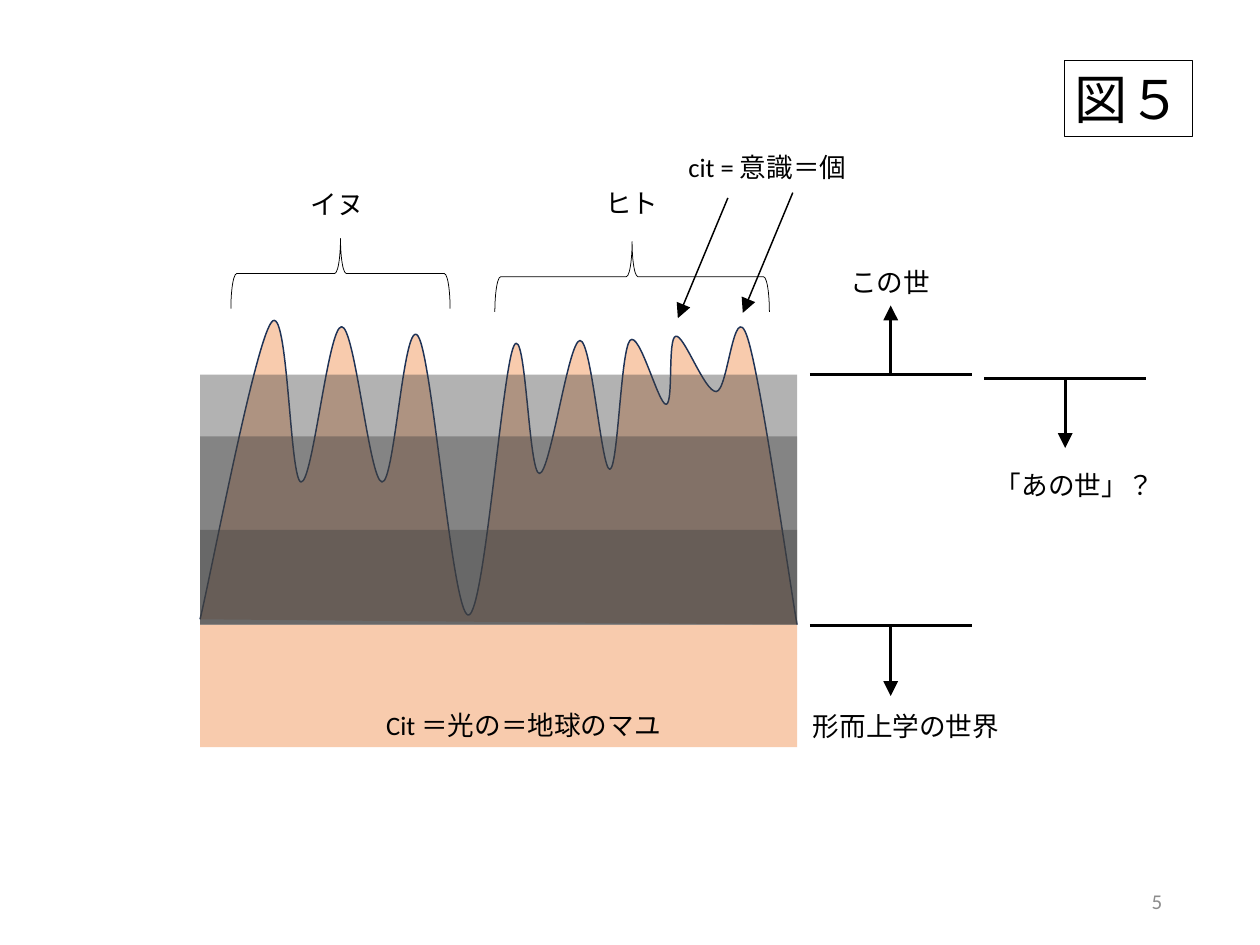
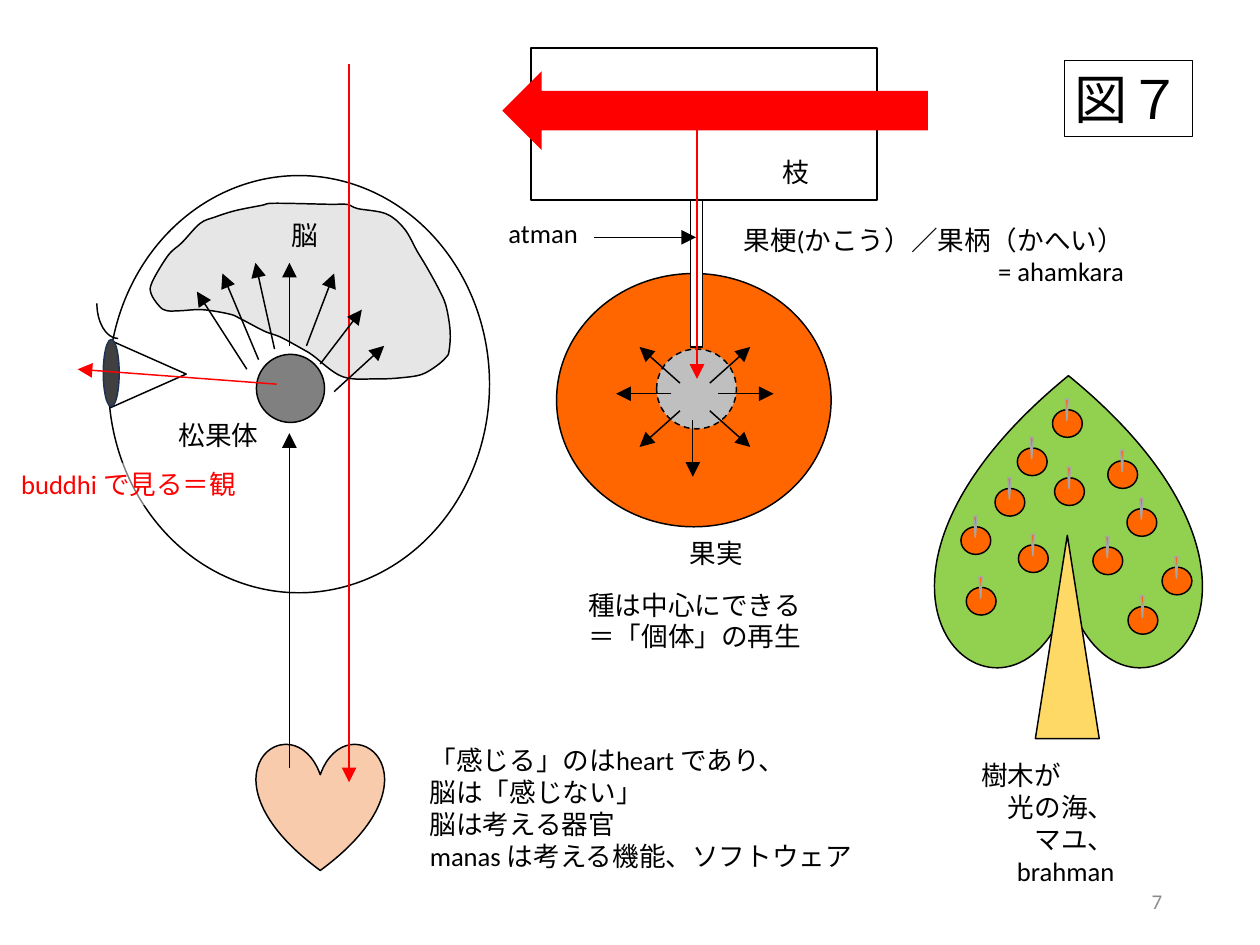
from pptx import Presentation
from pptx.dml.color import RGBColor
from pptx.enum.dml import MSO_LINE
from pptx.enum.lang import MSO_LANGUAGE_ID
from pptx.enum.shapes import MSO_CONNECTOR, MSO_SHAPE
from pptx.enum.text import MSO_ANCHOR, MSO_AUTO_SIZE, PP_ALIGN
from pptx.oxml.ns import qn
from pptx.util import Pt
from lxml.etree import SubElement

PX = 9144
FONT = "Calibri"
BLACK = RGBColor(0x00, 0x00, 0x00)
WHITE = RGBColor(0xFF, 0xFF, 0xFF)
RED = RGBColor(0xFF, 0x00, 0x00)
ORANGE = RGBColor(0xFF, 0x66, 0x00)
PEACH = RGBColor(0xF8, 0xCB, 0xAD)
GREEN = RGBColor(0x92, 0xD0, 0x50)
YELLOW = RGBColor(0xFF, 0xD9, 0x66)
NAVY = RGBColor(0x1E, 0x32, 0x56)
CHARCOAL = RGBColor(0x40, 0x40, 0x40)
GRAY = RGBColor(0x80, 0x80, 0x80)
NUMBER_GRAY = RGBColor(0x8C, 0x8C, 0x8C)
STEM_GRAY = RGBColor(0xA6, 0xA6, 0xA6)
SEED_GRAY = RGBColor(0xBF, 0xBF, 0xBF)
PALE_GRAY = RGBColor(0xE7, 0xE6, 0xE6)


def write(frame, text, size=18, color=BLACK, align=PP_ALIGN.LEFT, anchor=MSO_ANCHOR.TOP,
          wrap=True, fit=MSO_AUTO_SIZE.SHAPE_TO_FIT_TEXT):
    frame.word_wrap = wrap
    frame.auto_size = fit
    frame.vertical_anchor = anchor
    for index, line in enumerate(text.split("\n")):
        para = frame.add_paragraph() if index else frame.paragraphs[0]
        para.alignment = align
        span = para.add_run()
        span.text = line
        span.font.name = FONT
        span.font.size = Pt(size)
        span.font.color.rgb = color
        span.font.language_id = MSO_LANGUAGE_ID.JAPANESE


def bend(shape, points, closed):
    count = len(points)
    left, top = (min(axis) for axis in zip(*points))

    def point(index):
        return points[index % count if closed else min(max(index, 0), count - 1)]

    segments = list(shape._element.iter(qn("a:lnTo")))
    for index, segment in enumerate(segments):
        before, start, end, after = (point(index + shift) for shift in (-1, 0, 1, 2))
        controls = (
            tuple(s + (e - b) / 6 for b, s, e in zip(before, start, end)),
            tuple(e - (a - s) / 6 for s, e, a in zip(start, end, after)),
            end)
        segment.tag = qn("a:cubicBezTo")
        segment.remove(segment[0])
        for x, y in controls:
            corner = SubElement(segment, qn("a:pt"))
            corner.set("x", str(round((x - left) * PX)))
            corner.set("y", str(round((y - top) * PX)))


class Sketch:
    """Holds the deck style and the current page, and draws each kind of element."""

    def __init__(self, width, height):
        self.deck = Presentation()
        self.deck.slide_width = width * PX
        self.deck.slide_height = height * PX
        self.page = None

    def new_page(self, title, number):
        self.page = self.deck.slides.add_slide(self.deck.slide_layouts[5])
        box = self.page.shapes.title
        box.left, box.top, box.width, box.height = (v * PX for v in (1000, 57, 121, 71))
        box.line.color.rgb = BLACK
        box.line.width = Pt(0.75)
        write(box.text_frame, title, size=36, wrap=False, fit=MSO_AUTO_SIZE.NONE)
        self.label(number, 836, 823, 266, 47, size=14.2, color=NUMBER_GRAY,
                   align=PP_ALIGN.RIGHT, anchor=MSO_ANCHOR.MIDDLE, fit=MSO_AUTO_SIZE.NONE)

    def paint(self, shape, fill, line, weight, alpha=None):
        if fill is None:
            shape.fill.background()
        else:
            shape.fill.solid()
            shape.fill.fore_color.rgb = fill
            if alpha:
                color = shape._element.spPr.find(qn("a:solidFill"))[0]
                SubElement(color, qn("a:alpha")).set("val", str(alpha * 1000))
        if line is None:
            shape.line.fill.background()
        else:
            shape.line.color.rgb = line
            shape.line.width = Pt(weight)

    def shape(self, kind, x, y, width, height, fill=None, line=BLACK, weight=1,
              alpha=None, turn=0, dash=None):
        shape = self.page.shapes.add_shape(kind, x * PX, y * PX, width * PX, height * PX)
        shape.shadow.inherit = False
        shape.rotation = turn
        self.paint(shape, fill, line, weight, alpha)
        if dash:
            shape.line.dash_style = dash

    def outline(self, points, fill, line=BLACK, closed=False):
        builder = self.page.shapes.build_freeform(*points[0], scale=PX)
        builder.add_line_segments(points[1:] + points[:1] * closed, close=closed)
        shape = builder.convert_to_shape()
        path = next(shape._element.iter(qn("a:path")))
        path.set("w", str(shape.width))
        path.set("h", str(shape.height))
        for corner in path.iter(qn("a:pt")):
            for axis in ("x", "y"):
                corner.set(axis, str(int(corner.get(axis)) * PX))
        bend(shape, points, closed)
        shape.shadow.inherit = False
        self.paint(shape, fill, line, 1)

    def label(self, text, x, y, width, height=40, fill=None, alpha=None, **style):
        box = self.page.shapes.add_textbox(x * PX, y * PX, width * PX, height * PX)
        if fill is not None:
            self.paint(box, fill, None, 0, alpha)
        write(box.text_frame, text, **style)

    def line(self, x1, y1, x2, y2, color=BLACK, weight=1, arrow=True):
        line = self.page.shapes.add_connector(
            MSO_CONNECTOR.STRAIGHT, x1 * PX, y1 * PX, x2 * PX, y2 * PX)
        line.line.color.rgb = color
        line.line.width = Pt(weight)
        if arrow:
            head = SubElement(line._element.spPr.find(qn("a:ln")), qn("a:tailEnd"))
            for key, value in (("type", "triangle"), ("w", "lg"), ("len", "lg")):
                head.set(key, value)
        SubElement(line._element.spPr, qn("a:effectLst"))

    def border(self, x, y, rise):
        self.line(x, y, x + 152, y, weight=2, arrow=False)
        self.line(x + 76, y, x + 76, y + rise, weight=2)

    def fruit(self, x, y):
        self.shape(MSO_SHAPE.FLOWCHART_CONNECTOR, x, y, 28, 26, ORANGE)
        self.shape(MSO_SHAPE.ISOSCELES_TRIANGLE, x + 12, y - 10, 3, 20, ORANGE, STEM_GRAY, turn=180)


def draw_worlds(sketch):
    sketch.new_page("図５", "5")
    waves = [(188, 582), (255, 303), (283, 453), (321, 307), (359, 453), (393, 316),
             (440, 578), (483, 325), (507, 445), (545, 320), (573, 441), (592, 320),
             (626, 380), (635, 316), (673, 368), (702, 316), (749, 587)]
    sketch.outline(waves, PEACH, NAVY)
    sketch.shape(MSO_SHAPE.RECTANGLE, 188, 587, 561, 115, PEACH, None)
    for top in (352, 410, 498):
        sketch.shape(MSO_SHAPE.RECTANGLE, 188, top, 561, 587 - top, CHARCOAL, None, alpha=40)
    for x, y in ((684, 186), (745, 181)):
        sketch.line(x, y, x - 47, y + 113)
    for x, y, rise in ((761, 352, -65), (761, 588, 66), (925, 356, 65)):
        sketch.border(x, y, rise)
    for x, y, height in ((287, 154, 206), (561, 131, 258)):
        sketch.shape(MSO_SHAPE.RIGHT_BRACE, x, y, 66, height, weight=0.5, turn=270)
    for text, x, y, width in (
            ("cit = 意識＝個", 637, 137, 170), ("Cit ＝光の＝地球のマユ", 353, 661, 285),
            ("この世", 789, 245, 96), ("形而上学の世界", 754, 662, 197),
            ("「あの世」？", 925, 436, 172), ("イヌ", 282, 172, 71), ("ヒト", 559, 171, 71)):
        sketch.label(text, x, y, width)


def draw_tree(sketch):
    sketch.shape(MSO_SHAPE.HEART, 879, 353, 250, 278, GREEN, turn=180)
    sketch.shape(MSO_SHAPE.ISOSCELES_TRIANGLE, 973, 503, 60, 191, YELLOW)
    for x, y in ((957, 512), (908, 552), (1092, 533), (1060, 570), (989, 385), (956, 421),
                 (1041, 433), (991, 449), (1059, 478), (1027, 514), (935, 459), (903, 495)):
        sketch.fruit(x, y)
    sketch.label("樹木が　　\n光の海、\nマユ、\nbrahman", 911, 708, 146, 131, align=PP_ALIGN.RIGHT)


def draw_head(sketch):
    sketch.shape(MSO_SHAPE.HEART, 241, 698, 120, 120, PEACH)
    sketch.shape(MSO_SHAPE.OVAL, 102, 165, 358, 392)
    sketch.shape(MSO_SHAPE.FLOWCHART_MERGE, 108, 316, 63, 71, turn=270)
    sketch.shape(MSO_SHAPE.OVAL, 97, 319, 15, 63, CHARCOAL, NAVY)
    sketch.shape(MSO_SHAPE.ARC, 91, 252, 40, 66, turn=180)
    brain = [(143, 265), (158, 240), (171, 228), (188, 210), (202, 204), (221, 198),
             (246, 193), (258, 191), (310, 192), (326, 192), (336, 196), (363, 201),
             (380, 215), (392, 236), (401, 251), (412, 271), (419, 287), (423, 311),
             (422, 330), (419, 336), (410, 344), (396, 352), (377, 355), (355, 356),
             (322, 354), (294, 334), (286, 329), (264, 317), (248, 311), (225, 299),
             (215, 295), (190, 291), (170, 292), (157, 292), (150, 288), (142, 276)]
    sketch.outline(brain, PALE_GRAY, closed=True)
    sketch.shape(MSO_SHAPE.OVAL, 241, 333, 64, 64, GRAY)
    sketch.line(328, 60, 328, 735, RED)
    for ray in ((272, 722, 272, 407), (272, 325, 272, 247), (258, 328, 240, 247),
                (288, 325, 314, 257), (301, 342, 340, 291), (243, 338, 209, 257),
                (314, 368, 361, 325), (232, 347, 185, 274)):
        sketch.line(*ray)
    sketch.label("脳", 264, 201, 45)
    sketch.label("松果体", 158, 389, 111)


def draw_fruit_section(sketch):
    sketch.shape(MSO_SHAPE.FLOWCHART_CONNECTOR, 523, 257, 258, 238, ORANGE)
    sketch.shape(MSO_SHAPE.RECTANGLE, 649, 188, 11, 138, WHITE)
    sketch.shape(MSO_SHAPE.OVAL, 617, 328, 75, 75, SEED_GRAY, dash=MSO_LINE.DASH)
    sketch.shape(MSO_SHAPE.RECTANGLE, 499, 45, 325, 143, WHITE)
    sketch.line(655, 100, 655, 356, RED)
    sketch.shape(MSO_SHAPE.LEFT_ARROW, 472, 67, 400, 74, RED, None)
    for side in (-1, 1):
        for x1, y1, x2, y2 in ((22, 370, 74, 370), (14, 360, 52, 326), (14, 386, 52, 420)):
            sketch.line(653 + side * x1, y1, 653 + side * x2, y2)
    sketch.line(651, 395, 651, 448)
    sketch.line(558, 223, 654, 223)
    sketch.label("枝", 725, 142, 45)
    sketch.label("果実", 638, 500, 71)
    sketch.label("atman", 468, 199, 90)
    sketch.label("果梗(かこう）／果柄（かへい）\n= ahamkara", 685, 205, 381, 71, align=PP_ALIGN.RIGHT)
    sketch.label("種は中心にできる\n＝「個体」の再生", 543, 548, 222, 71)


def draw_perception(sketch):
    sketch.new_page("図７", "7")
    draw_tree(sketch)
    draw_head(sketch)
    draw_fruit_section(sketch)
    sketch.label("「感じる」のはheart であり、\n脳は「感じない」\n脳は考える器官\n"
                 "manas は考える機能、ソフトウェア", 394, 694, 422, 131)
    sketch.line(260, 361, 73, 347, RED)
    sketch.label("buddhi で見る＝観", 10, 435, 225, fill=WHITE, alpha=50, color=RED)


def main():
    sketch = Sketch(1184, 888)
    draw_worlds(sketch)
    draw_perception(sketch)
    sketch.deck.save("out.pptx")


if __name__ == "__main__":
    main()
